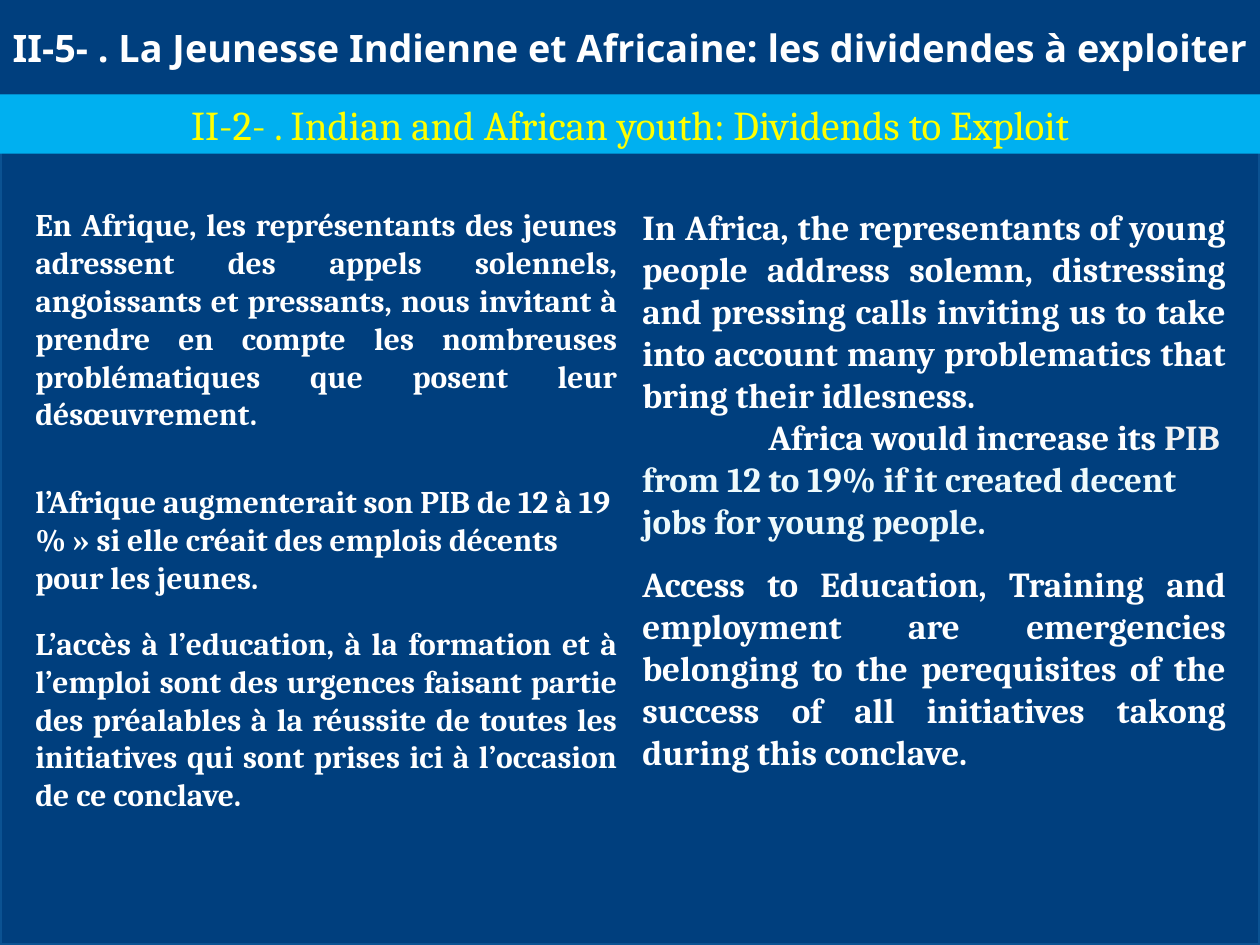
from pptx import Presentation
from pptx.dml.color import RGBColor
from pptx.enum.shapes import MSO_SHAPE
from pptx.enum.text import MSO_ANCHOR, MSO_AUTO_SIZE, PP_ALIGN
from pptx.util import Inches, Pt
from lxml.etree import SubElement
from pptx.oxml.ns import qn

BLACK = RGBColor(0x00, 0x00, 0x00)
NAVY = RGBColor(0x00, 0x3F, 0x7E)
NAVY_EDGE = RGBColor(0x0B, 0x52, 0x92)
SKY = RGBColor(0x00, 0xB0, 0xF0)
YELLOW = RGBColor(0xFF, 0xFF, 0x00)
WHITE = RGBColor(0xFF, 0xFF, 0xFF)
PALE_GREY = RGBColor(0xF2, 0xF2, 0xF2)
PALE_BLUE = RGBColor(0xEE, 0xFA, 0xFC)


def write_paragraph(paragraph, text, size, font="Cambria", color=WHITE, bold=True,
                    align=PP_ALIGN.JUSTIFY, before=0, first_indent=0):
    """Format a paragraph; text is a string or a list of (string, colour) pairs."""
    paragraph.alignment = align
    paragraph.space_before = Pt(before)
    properties = paragraph._p.get_or_add_pPr()
    properties.set("marL", "0")
    properties.set("indent", str(Inches(first_indent)))
    SubElement(properties, qn("a:buNone"))
    for words, run_color in [(text, color)] if isinstance(text, str) else text:
        run = paragraph.add_run()
        run.text = words
        run.font.name = font
        run.font.size = Pt(size)
        run.font.bold = bold
        run.font.color.rgb = run_color


def add_band(top, height, fill):
    shape = slide.shapes.add_shape(
        MSO_SHAPE.RECTANGLE, Inches(0), Inches(top), Inches(10), Inches(height))
    shape.shadow.inherit = False
    shape.fill.solid()
    shape.fill.fore_color.rgb = fill
    shape.line.fill.background()
    return shape


presentation = Presentation()
presentation.slide_width = Inches(10)
presentation.slide_height = Inches(7.5)
slide = presentation.slides.add_slide(presentation.slide_layouts[1])
slide.background.fill.solid()
slide.background.fill.fore_color.rgb = BLACK

title = slide.shapes.title
french_body = slide.placeholders[1]

# The panel lies behind the placeholders
panel = add_band(0.75, 6.75, NAVY)
panel.line.color.rgb = NAVY_EDGE
panel.line.width = Pt(2)
title.element.addprevious(panel.element)

title.left, title.top = Inches(0), Inches(0)
title.width, title.height = Inches(10), Inches(0.75)
title.fill.solid()
title.fill.fore_color.rgb = NAVY
title.text_frame.auto_size = MSO_AUTO_SIZE.NONE
title.text_frame.vertical_anchor = MSO_ANCHOR.MIDDLE
title.text_frame.margin_left = title.text_frame.margin_right = Inches(0.05)
write_paragraph(title.text_frame.paragraphs[0],
                "II-5- . La Jeunesse Indienne et Africaine: les dividendes à exploiter",
                size=21.6, font="Noto Sans", align=PP_ALIGN.CENTER)

subtitle = add_band(0.75, 0.47, SKY)
subtitle.text_frame.vertical_anchor = MSO_ANCHOR.MIDDLE
write_paragraph(subtitle.text_frame.paragraphs[0],
                "II-2- . Indian and African youth: Dividends to Exploit",
                size=23.4, color=YELLOW, bold=False, align=PP_ALIGN.CENTER)

french_body.left, french_body.top = Inches(-0.42), Inches(1.58)
french_body.width, french_body.height = Inches(5.42), Inches(5.83)
french_body.text_frame.margin_left = Inches(0.7)
english_body = slide.shapes.add_textbox(Inches(5), Inches(1.58), Inches(4.83), Inches(5.92))

french = [
    ("En Afrique, les représentants des jeunes adressent des appels solennels, "
     "angoissants et pressants, nous invitant à prendre en compte les nombreuses "
     "problématiques que posent leur désœuvrement.", {}),
    ("l’Afrique augmenterait son PIB de 12 à 19 % » si elle créait des emplois "
     "décents pour les jeunes.", {"align": PP_ALIGN.LEFT, "before": 28.6}),
    ("L’accès à l’education, à la formation et à l’emploi sont des urgences faisant "
     "partie des préalables à la réussite de toutes les initiatives qui sont prises "
     "ici à l’occasion de ce conclave.", {"before": 16.2}),
]
english = [
    ("In Africa, the representants of young people address solemn, distressing and "
     "pressing calls inviting us to take into account many problematics that bring "
     "their idlesness.", {}),
    ([("Africa would increase its ", WHITE), ("PIB ", PALE_GREY),
      ("from 12 to 19% if it created decent jobs for young people.", PALE_BLUE)],
     {"align": PP_ALIGN.LEFT, "first_indent": 1}),
    ("Access to Education, Training and employment are emergencies belonging to the "
     "perequisites of the success of all initiatives takong during this conclave.",
     {"before": 12}),
]

for body, paragraphs, size in ((french_body, french, 18), (english_body, english, 20)):
    frame = body.text_frame
    frame.word_wrap = True
    frame.auto_size = MSO_AUTO_SIZE.NONE
    frame.vertical_anchor = MSO_ANCHOR.TOP
    for index, (text, options) in enumerate(paragraphs):
        paragraph = frame.add_paragraph() if index else frame.paragraphs[0]
        write_paragraph(paragraph, text, size=size, **options)

presentation.save("out.pptx")
